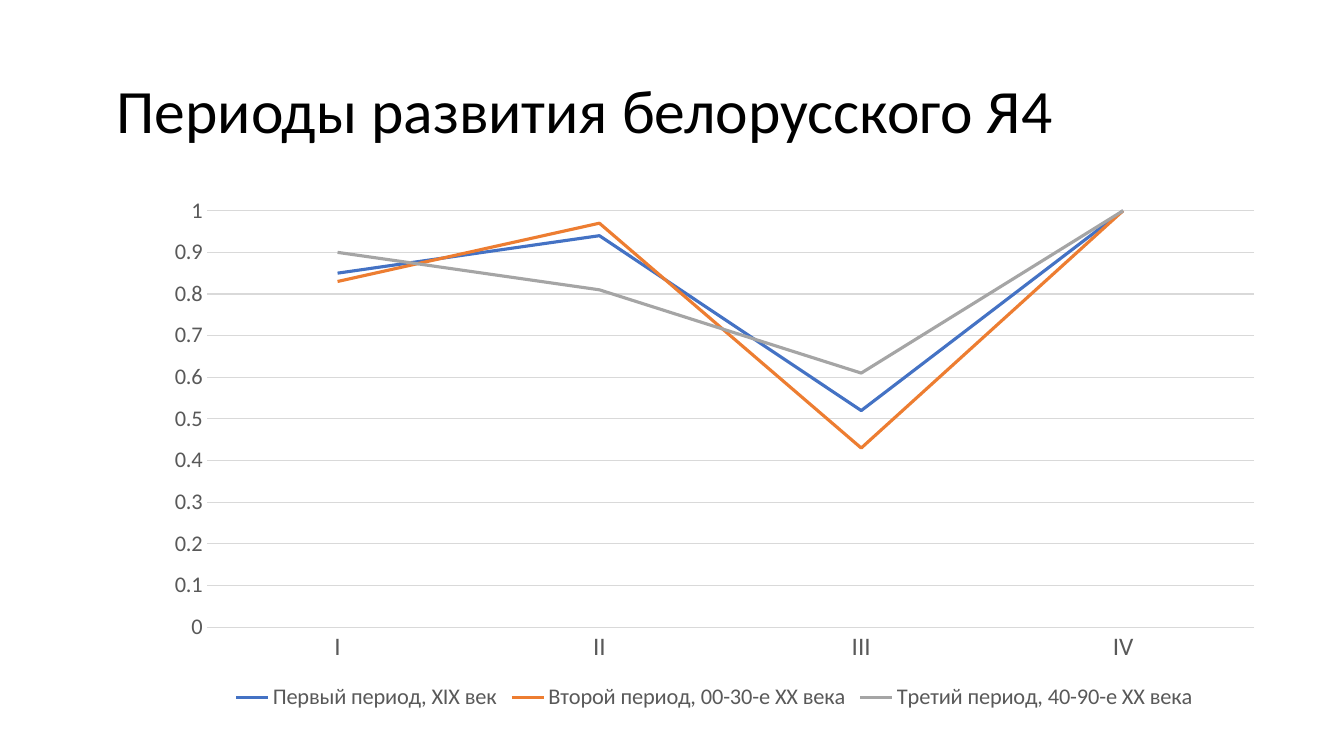
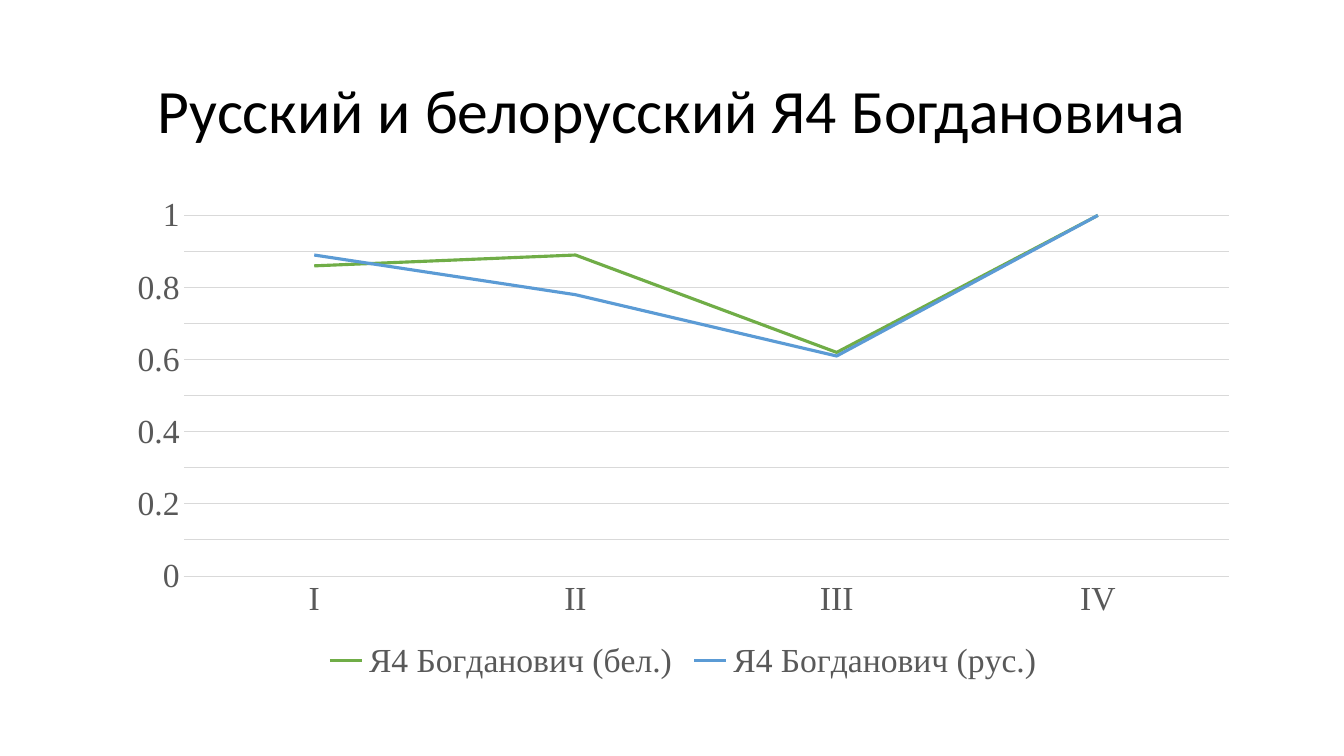
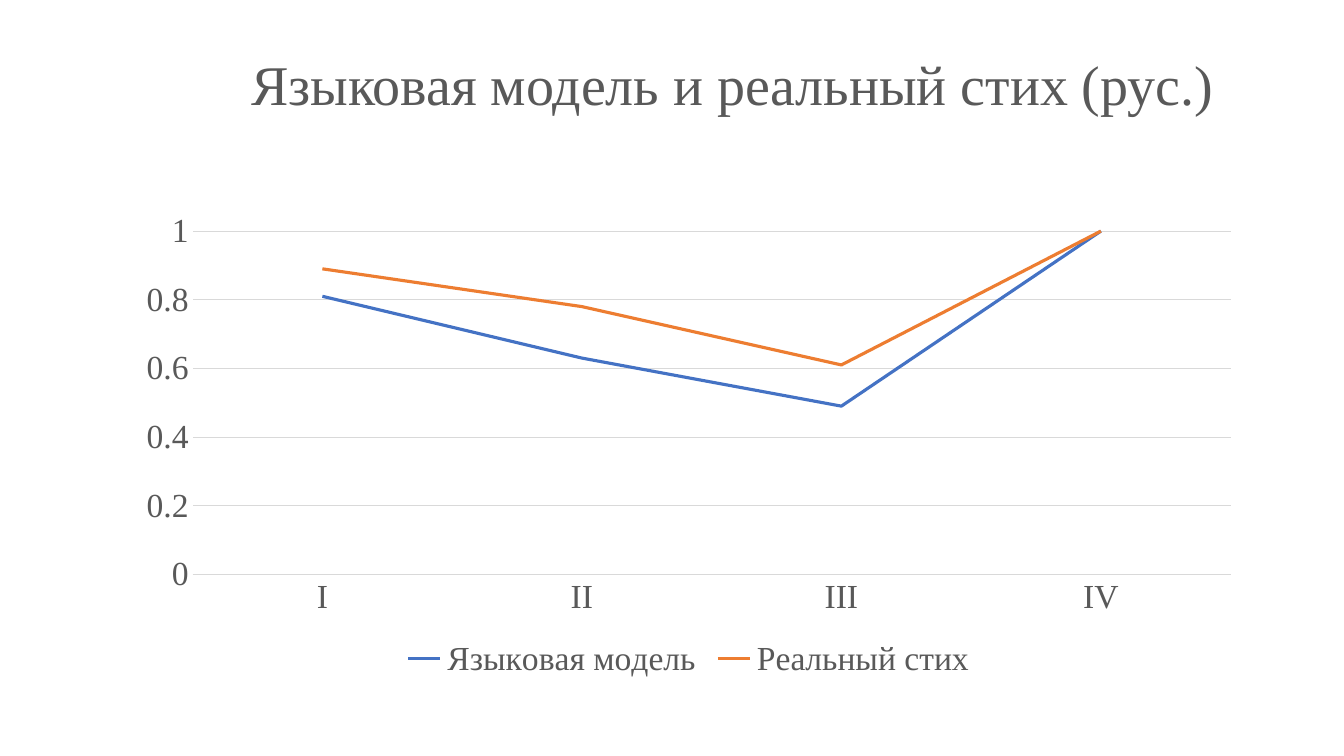
"""Three slides of line charts comparing stress profiles of Belarusian and Russian iambic tetrameter."""
from pptx import Presentation
from pptx.chart.data import CategoryChartData as ChartData
from pptx.dml.color import RGBColor
from pptx.enum.chart import XL_CHART_TYPE as ChartType, XL_LEGEND_POSITION as LegendPosition
from pptx.enum.chart import XL_MARKER_STYLE as Marker, XL_TICK_MARK as TickMark
from pptx.enum.text import MSO_ANCHOR as Anchor, PP_ALIGN as Align
from pptx.util import Inches, Pt

COLORS = {
    "black": "000000", "text": "595959", "grid": "D9D9D9", "blue": "4472C4",
    "orange": "ED7D31", "gray": "A5A5A5", "green": "70AD47", "sky": "5B9BD5",
}
SANS, SERIF = "Calibri", "Times New Roman"
FEET = ["I", "II", "III", "IV"]
TITLE_BOX = (6.9, 5.33, 86.25, 19.33)
RUSSIAN_VERSE = (0.89, 0.78, 0.61, 1)

SLIDES = [
    {
        "title": " Периоды развития белорусского Я4", "title_box": TITLE_BOX,
        "title_font": (SANS, 44, "black"), "align": Align.LEFT,
        "chart_box": (11.33, 24.67, 83.65, 70), "chart_font": SANS,
        "category_size": 18, "label_size": 16, "step": 0.1,
        "series": [
            ("Первый период, XIX век", "blue", (0.85, 0.94, 0.52, 1)),
            ("Второй период, 00-30-е ХХ века", "orange", (0.83, 0.97, 0.43, 1)),
            ("Третий период, 40-90-е ХХ века", "gray", (0.9, 0.81, 0.61, 1)),
        ],
    },
    {
        "title": "Русский и белорусский Я4 Богдановича", "title_box": TITLE_BOX,
        "title_font": (SANS, 44, "black"), "align": Align.CENTER,
        "chart_box": (8.55, 24.67, 84.55, 66.13), "chart_font": SERIF,
        "category_size": 24, "label_size": 24, "step": 0.1,
        "series": [
            ("Я4 Богданович (бел.)", "green", (0.86, 0.89, 0.62, 1)),
            ("Я4 Богданович (рус.)", "sky", RUSSIAN_VERSE),
        ],
    },
    {
        "title": "Языковая модель и реальный стих (рус.)\v", "title_box": (10.43, 5.33, 88.15, 21.47),
        "title_font": (SERIF, 40, "text"), "align": Align.CENTER,
        "chart_box": (9.23, 26.8, 84.02, 63.73), "chart_font": SERIF,
        "category_size": 24, "label_size": 24, "step": 0.2,
        "series": [
            ("Языковая модель", "blue", (0.81, 0.63, 0.49, 1)),
            ("Реальный стих", "orange", RUSSIAN_VERSE),
        ],
    },
]

presentation = Presentation()
presentation.slide_width, presentation.slide_height = Inches(13.33), Inches(7.5)


def place(box):
    """Turn percentages of the slide into left, top, width and height."""
    sides = (presentation.slide_width, presentation.slide_height) * 2
    return [int(side * share / 100) for side, share in zip(sides, box)]


def style(font, name, size, color):
    """Set the typeface, size and colour of a font."""
    font.name, font.size = name, Pt(size)
    font.color.rgb = RGBColor.from_string(COLORS[color])


for content in SLIDES:
    slide = presentation.slides.add_slide(presentation.slide_layouts[6])

    text_frame = slide.shapes.add_textbox(*place(content["title_box"])).text_frame
    text_frame.word_wrap = True
    text_frame.vertical_anchor = Anchor.MIDDLE
    paragraph = text_frame.paragraphs[0]
    paragraph.text = content["title"]
    paragraph.alignment = content["align"]
    paragraph.line_spacing = 0.9
    style(paragraph.font, *content["title_font"])

    data = ChartData()
    data.categories = FEET
    for name, color, values in content["series"]:
        data.add_series(name, values)
    chart = slide.shapes.add_chart(ChartType.LINE, *place(content["chart_box"]), data).chart
    chart.has_title = False
    typeface, label_size = content["chart_font"], content["label_size"]
    style(chart.font, typeface, label_size, "text")

    chart.has_legend = True
    chart.legend.position = LegendPosition.BOTTOM
    chart.legend.include_in_layout = False
    style(chart.legend.font, typeface, label_size, "text")

    category_axis, value_axis = chart.category_axis, chart.value_axis
    for axis, size in ((category_axis, content["category_size"]), (value_axis, label_size)):
        axis.major_tick_mark = axis.minor_tick_mark = TickMark.NONE
        style(axis.tick_labels.font, typeface, size, "text")
    value_axis.minimum_scale, value_axis.maximum_scale = 0, 1
    value_axis.major_unit = content["step"]
    value_axis.format.line.fill.background()
    for line in (category_axis.format.line, value_axis.major_gridlines.format.line):
        line.width = Pt(0.75)
        line.color.rgb = RGBColor.from_string(COLORS["grid"])

    plot = chart.plots[0]
    plot.vary_by_categories = False
    for series, (name, color, values) in zip(plot.series, content["series"]):
        series.smooth = False
        series.marker.style = Marker.NONE
        series.format.line.width = Pt(2.25)
        series.format.line.color.rgb = RGBColor.from_string(COLORS[color])

presentation.save("out.pptx")
